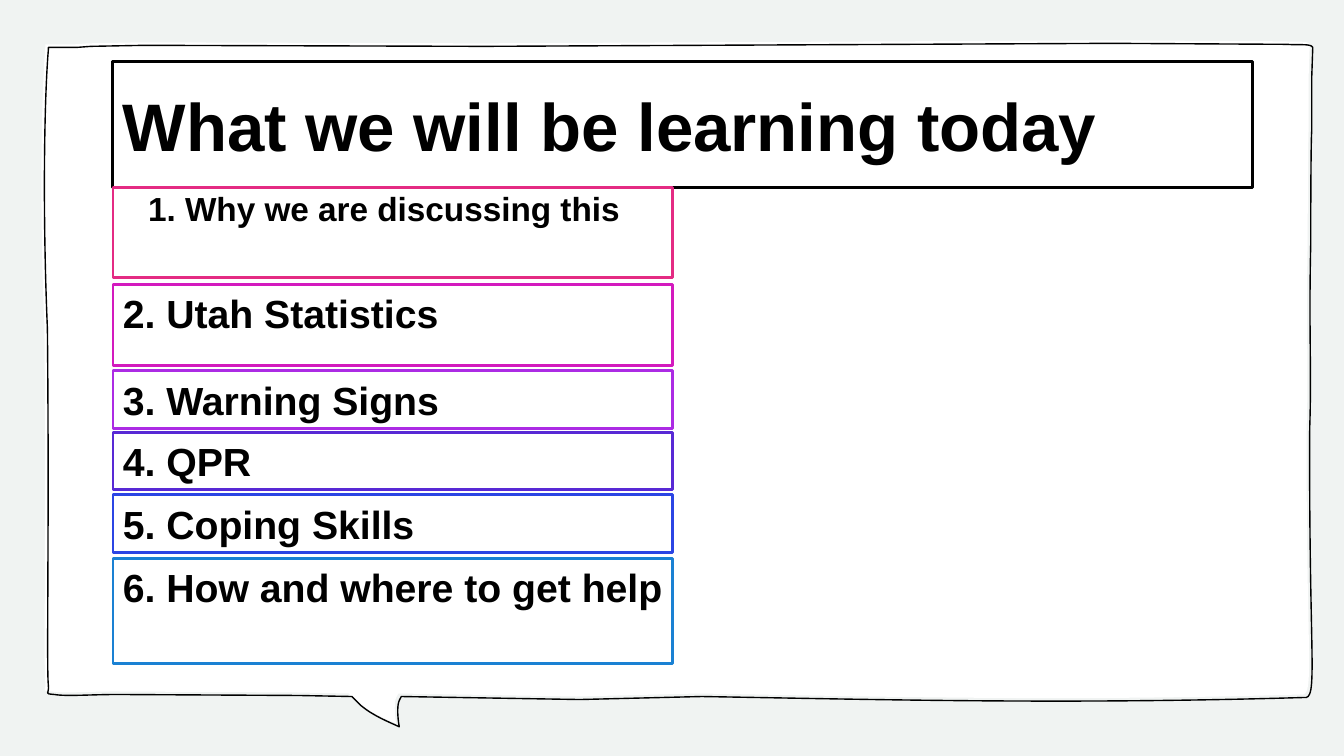
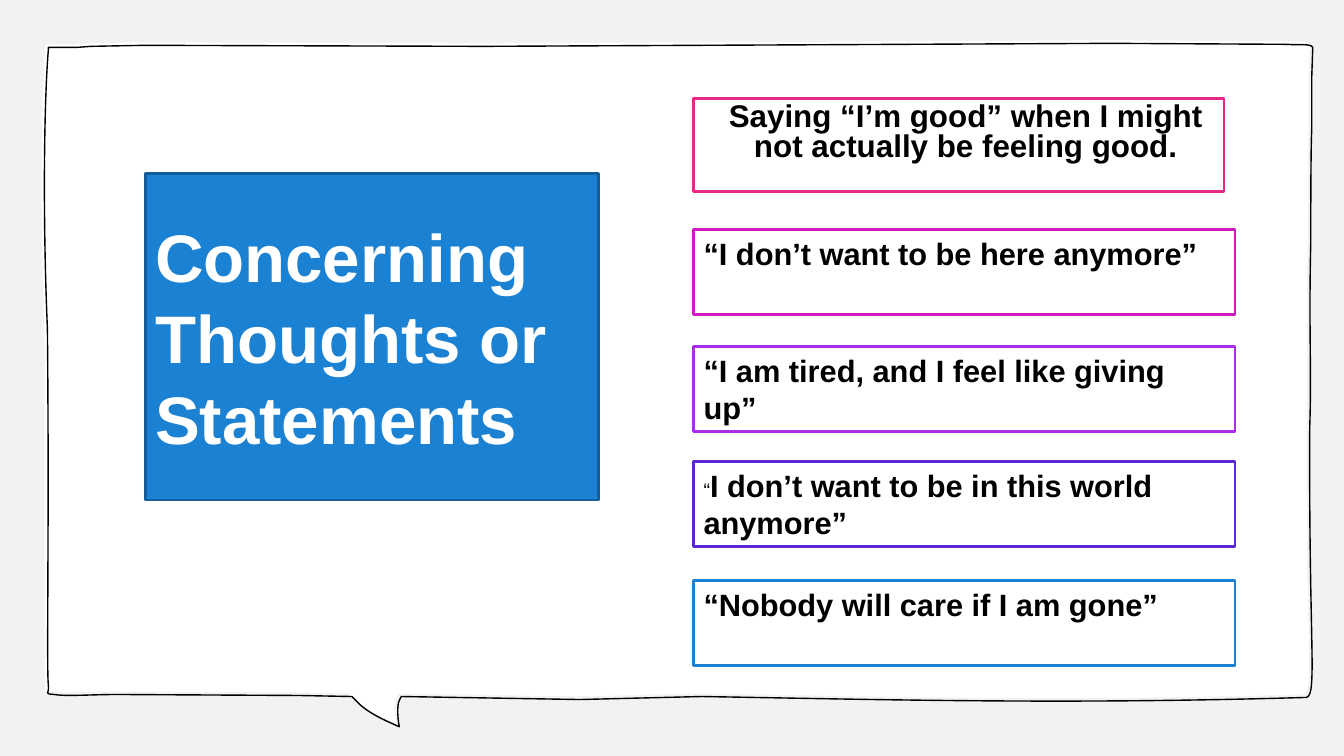
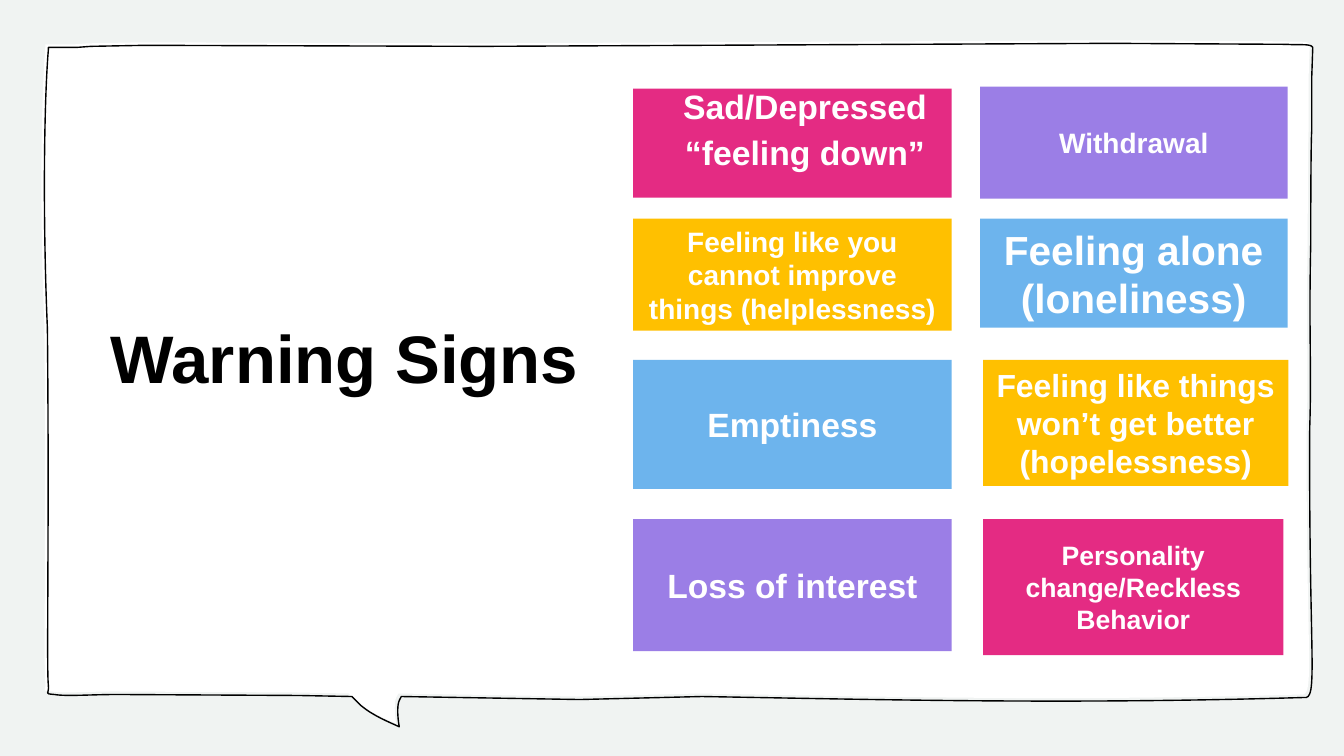
from lxml import etree
from pptx import Presentation
from pptx.dml.color import RGBColor
from pptx.enum.shapes import MSO_SHAPE
from pptx.enum.text import MSO_ANCHOR, PP_ALIGN
from pptx.oxml.ns import qn
from pptx.util import Inches, Pt

FONT = "Arial"
BLACK = RGBColor(0x00, 0x00, 0x00)
WHITE = RGBColor(0xFF, 0xFF, 0xFF)
MIST = RGBColor(0xF0, 0xF3, 0xF2)
PINK = RGBColor(0xE4, 0x2B, 0x83)
MAGENTA = RGBColor(0xD3, 0x1A, 0xBE)
PURPLE = RGBColor(0xAC, 0x2B, 0xE4)
VIOLET = RGBColor(0x58, 0x29, 0xD5)
ROYAL = RGBColor(0x2B, 0x45, 0xE4)
BLUE = RGBColor(0x1A, 0x81, 0xD3)
DARK_BLUE = RGBColor(0x13, 0x5E, 0x9A)
LAVENDER = RGBColor(0x9B, 0x7E, 0xE6)
SKY = RGBColor(0x6D, 0xB4, 0xED)
AMBER = RGBColor(0xFF, 0xC0, 0x00)

TITLE = {"size": 48, "anchor": MSO_ANCHOR.MIDDLE}
BUBBLE_SHIFT = 0.03
# A pair is the end of a straight line; six numbers are a Bézier curve.
BUBBLE_START = (11.03, 0.43)
BUBBLE_OUTLINE = [
    (12.76, 0.44), (12.89, 0.45, 13, 0.43, 13.02, 0.47), (13.01, 0.77),
    (13.01, 0.94, 13.01, 1.13, 13.01, 1.3),
    (13, 1.42, 13, 2.35, 13, 2.42),
    (12.98, 3.3, 13.01, 3.65, 12.99, 4.25),
    (12.98, 6.56, 13.08, 6.95, 12.93, 6.92),
    (10.56, 6.99, 8.72, 6.94, 6.96, 6.91),
    (5.75, 6.94), (3.98, 6.91), (3.96, 6.95),
    (3.94, 6.99, 3.94, 7.1, 3.96, 7.21),
    (3.85, 7.16, 3.7, 7.1, 3.58, 7),
    (3.49, 6.91), (2.96, 6.9), (1.17, 6.89),
    (0.9, 6.89, 0.66, 6.91, 0.54, 6.89),
    (0.43, 6.88, 0.49, 6.89, 0.48, 6.8),
    (0.46, 6.65, 0.49, 5.22, 0.47, 3.26),
    (0.42, 2.07, 0.44, 0.96, 0.48, 0.49),
    (0.48, 0.48, 0.48, 0.48, 0.48, 0.47),
    (0.54, 0.47), (0.77, 0.47), (0.9, 0.46),
    (1.43, 0.45), (4.8, 0.46), (11.03, 0.43),
]


def paint(shape, fill=None, line=None, width=2):
    shape.shadow.inherit = False
    if fill is None:
        shape.fill.background()
    else:
        shape.fill.solid()
        shape.fill.fore_color.rgb = fill
    if line is None:
        shape.line.fill.background()
    else:
        shape.line.color.rgb = line
        shape.line.width = Pt(width)


def bend(shape, segments):
    """Turn the straight segments that have control points into Bézier curves."""
    lines = list(shape._element.iter(qn("a:lnTo")))
    for line, segment in zip(lines, segments):
        if len(segment) == 1:
            continue
        curve = etree.Element(qn("a:cubicBezTo"))
        for x, y in segment:
            etree.SubElement(curve, qn("a:pt"),
                             x=str(x - shape.left), y=str(y - shape.top))
        line.getparent().replace(line, curve)


def add_bubble(page):
    """White speech bubble with an outline set slightly off its fill."""
    for shift, look in ((BUBBLE_SHIFT, {"fill": WHITE}),
                        (0, {"line": BLACK, "width": 1})):
        start, *segments = [
            [(Inches(x - shift), Inches(y - shift))
             for x, y in zip(numbers[::2], numbers[1::2])]
            for numbers in (BUBBLE_START, *BUBBLE_OUTLINE)]
        builder = page.shapes.build_freeform(*start[0])
        builder.add_line_segments([segment[-1] for segment in segments], close=True)
        bubble = builder.convert_to_shape()
        bend(bubble, segments)
        paint(bubble, **look)


def add_page(deck):
    page = deck.slides.add_slide(deck.slide_layouts[6])
    add_bubble(page)
    return page


def add_text_box(page, box, paragraphs, size, color=BLACK, fill=None, line=None,
                 anchor=MSO_ANCHOR.TOP, align=PP_ALIGN.LEFT, spacing=1.0,
                 before=0, indent=(0, 0), right_inset=0.1):
    """Box of bold text; a paragraph is a string or a list of (text, font changes)."""
    place = [Inches(length) for length in box]
    if fill is None:
        shape = page.shapes.add_textbox(*place)
    else:
        shape = page.shapes.add_shape(MSO_SHAPE.RECTANGLE, *place)
    paint(shape, fill, line)
    frame = shape.text_frame
    frame_format = {"word_wrap": True, "vertical_anchor": anchor,
                    "margin_left": Inches(0.1), "margin_right": Inches(right_inset),
                    "margin_top": Inches(0.05), "margin_bottom": Inches(0.05)}
    for name, value in frame_format.items():
        setattr(frame, name, value)
    for number, spans in enumerate(paragraphs):
        para = frame.add_paragraph() if number else frame.paragraphs[0]
        para_format = {"alignment": align, "line_spacing": spacing,
                       "space_before": Pt(before)}
        for name, value in para_format.items():
            setattr(para, name, value)
        properties = para._p.get_or_add_pPr()
        for name, value in zip(("marL", "indent"), indent):
            properties.set(name, str(Inches(value)))
        if isinstance(spans, str):
            spans = [(spans, {})]
        for text, changes in spans:
            span = para.add_run()
            span.text = text
            span.font.color.rgb = color
            font_format = {"name": FONT, "size": Pt(size), "bold": True, **changes}
            for name, value in font_format.items():
                setattr(span.font, name, value)


def add_framed_list(page, left, width, rows, **shared):
    """Column of framed boxes; a row is (top, height, line colour, text, changes)."""
    for top, height, line, text, changes in rows:
        add_text_box(page, (left, top, width, height), [text],
                     **{"fill": WHITE, "line": line, **shared, **changes})


def build_agenda(deck):
    page = add_page(deck)
    left = 1.12
    add_text_box(page, (left, 0.61, 11.3, 1.25), ["What we will be learning today"],
                 line=BLACK, **TITLE)
    add_framed_list(page, left, 5.55, [
        (1.86, 0.89, PINK, "1. Why we are discussing this",
         {"size": 23.8, "spacing": 0.9, "before": 10, "indent": (0.25, 0), "fill": None}),
        (2.82, 0.81, MAGENTA, "2. Utah Statistics", {}),
        (3.68, 0.57, PURPLE, "3. Warning Signs", {}),
        (4.29, 0.57, VIOLET, "4. QPR", {}),
        (4.91, 0.57, ROYAL, "5. Coping Skills", {}),
        (5.54, 1.04, BLUE, "6. How and where to get help", {}),
    ], size=28, right_inset=0.05)


def build_statements(deck):
    page = add_page(deck)
    left = 6.88
    add_text_box(page, (1.44, 1.72, 4.5, 3.24), ["Concerning Thoughts or Statements"],
                 color=WHITE, fill=BLUE, line=DARK_BLUE, **TITLE)
    add_text_box(page, (left, 0.98, 5.26, 0.92),
                 ["Saying “I’m good” when I might not actually be feeling good."],
                 size=22.4, line=PINK, spacing=0.8, before=10, indent=(0.5, -0.25))
    small_quote = ("“", {"size": Pt(14), "bold": False})
    add_framed_list(page, left, 5.37, [
        (2.28, 0.84, MAGENTA, "“I don’t want to be here anymore”", {}),
        (3.44, 0.84, PURPLE, "“I am tired, and I feel like giving up”", {}),
        (4.58, 0.84, VIOLET,
         [small_quote, ("I don’t want to be in this world anymore”", {})], {}),
        (5.76, 0.84, BLUE, "“Nobody will care if I am gone”", {}),
    ], size=22, right_inset=0.15)


def build_warning_signs(deck):
    page = add_page(deck)
    add_text_box(page, (1, 2.76, 5.04, 1.55), ["Warning Signs"], **TITLE)
    add_text_box(page, (6.28, 0.88, 3.16, 1.08), ["Sad/Depressed", "“feeling down”"],
                 size=24.1, color=WHITE, fill=PINK, align=PP_ALIGN.CENTER,
                 spacing=0.8, before=10, indent=(0.5, -0.25))
    cards = [
        ((9.72, 0.86, 3.05, 1.11), LAVENDER, 20, "Withdrawal"),
        ((6.28, 2.17, 3.16, 1.11), AMBER, 20,
         "Feeling like you cannot improve things (helplessness)"),
        ((9.72, 2.17, 3.05, 1.08), SKY, 29, "Feeling alone (loneliness)"),
        ((6.28, 3.57, 3.16, 1.28), SKY, 24, "Emptiness"),
        ((9.75, 3.57, 3.03, 1.25), AMBER, 22.8,
         "Feeling like things won’t get better (hopelessness)"),
        ((6.28, 5.15, 3.16, 1.31), LAVENDER, 24, "Loss of interest"),
        ((9.75, 5.15, 2.98, 1.35), PINK, 19, "Personality change/Reckless Behavior"),
    ]
    for box, fill, size, text in cards:
        add_text_box(page, box, [text], size, color=WHITE, fill=fill,
                     anchor=MSO_ANCHOR.MIDDLE, align=PP_ALIGN.CENTER)


def main():
    deck = Presentation()
    deck.slide_width, deck.slide_height = Inches(13.33), Inches(7.5)
    backdrop = deck.slide_master.background.fill
    backdrop.solid()
    backdrop.fore_color.rgb = MIST
    for build in (build_agenda, build_statements, build_warning_signs):
        build(deck)
    deck.save("out.pptx")


if __name__ == "__main__":
    main()
